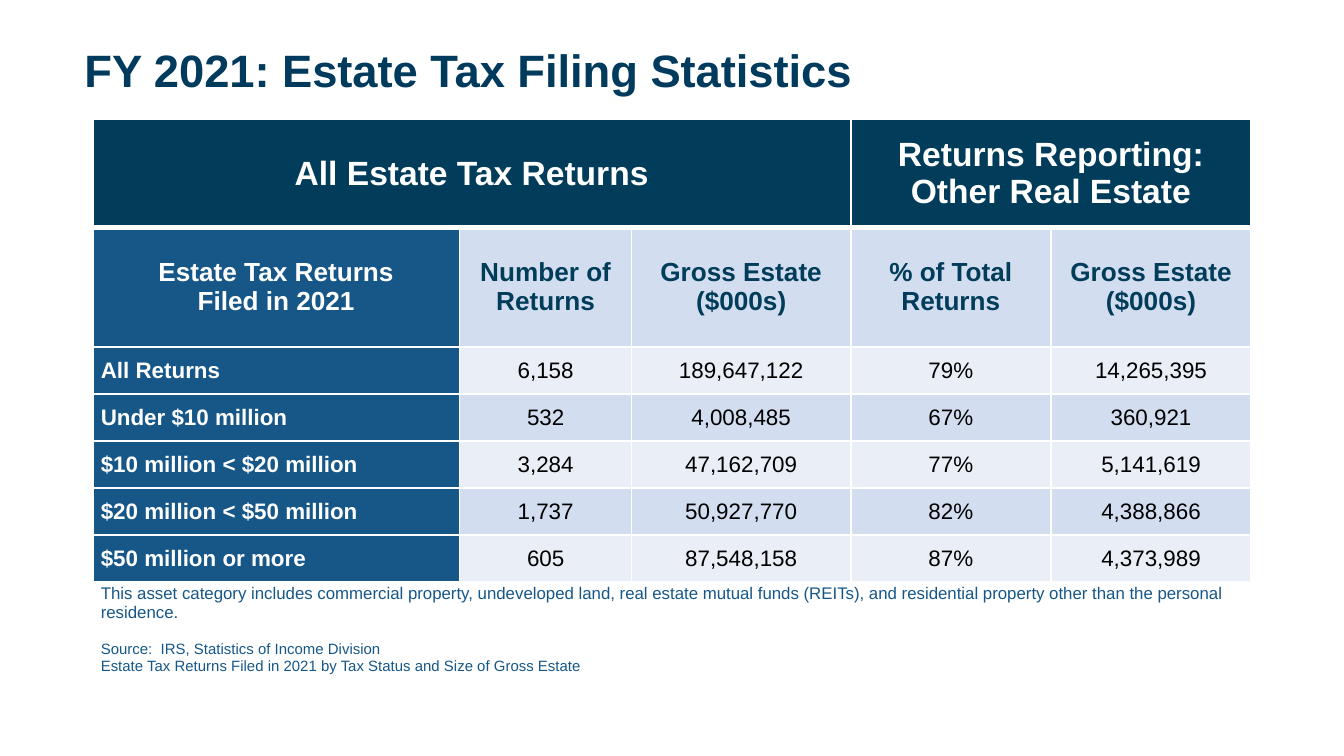
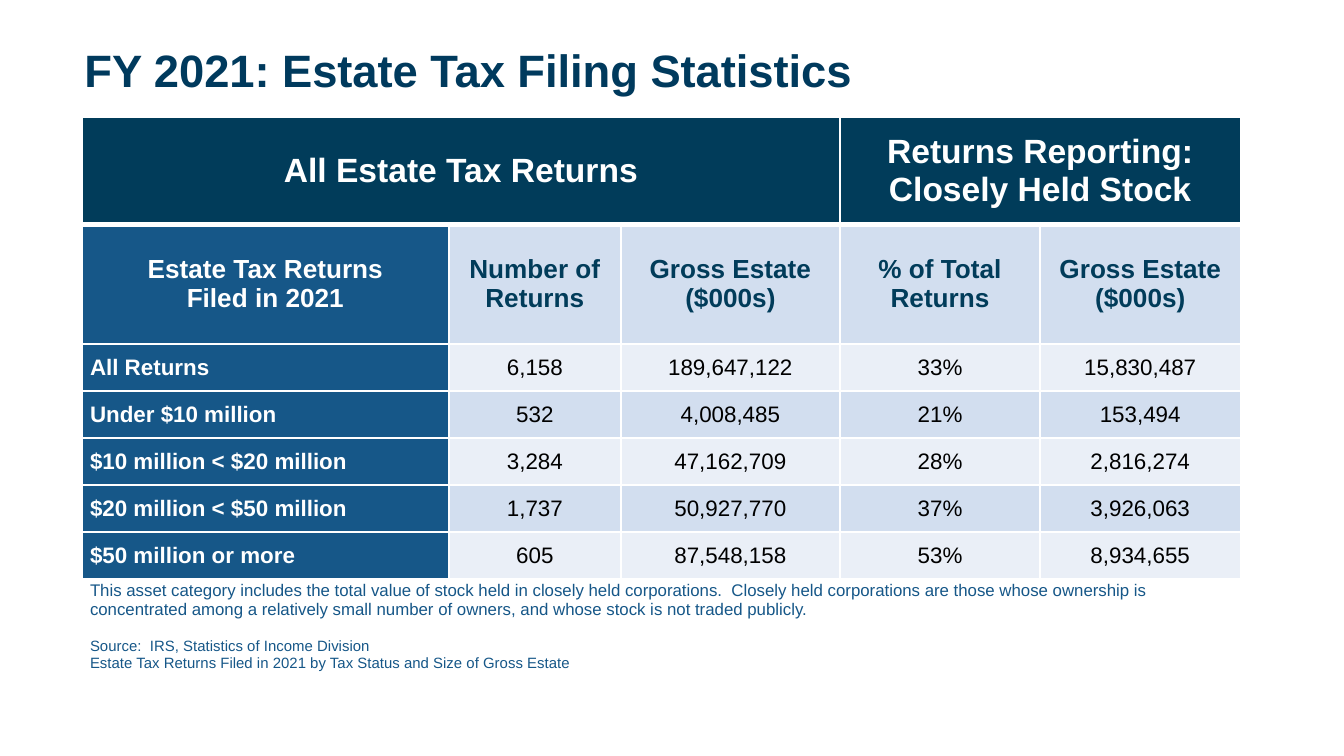
from copy import deepcopy
from dataclasses import dataclass

from lxml.etree import SubElement
from pptx import Presentation
from pptx.dml.color import RGBColor
from pptx.enum.text import MSO_ANCHOR, PP_ALIGN
from pptx.oxml.ns import qn
from pptx.util import Inches, Pt


@dataclass(frozen=True)
class Theme:
    """Colours, font and type sizes shared by all slides."""

    font: str = "Arial"
    title: str = "003A5D"
    navy: str = "013C5A"
    blue: str = "165788"
    light: str = "D2DEEF"
    pale: str = "EAEFF7"
    white: str = "FFFFFF"
    black: str = "000000"
    title_size: float = 24.3
    group_size: float = 18
    heading_size: float = 14
    body_size: float = 12
    note_size: float = 9
    source_size: float = 8


THEME = Theme()
SLIDE_WIDTH = Inches(10)
GRID_COLUMNS = 100
COLUMN_SPANS = (27.3, 12.8, 16.3, 14.9, 14.9)
ROW_SPANS = (8, 8.9) + (3.5,) * 6
BODY_INSETS = (0.6, 1, 1, 0, 0)
TITLE = "FY 2021: Estate Tax Filing Statistics"
HEADINGS = (
    "Estate Tax Returns\nFiled in 2021",
    "Number of\nReturns",
    "Gross Estate\n($000s)",
    "% of Total Returns",
    "Gross Estate ($000s)",
)
ALL_RETURNS = (
    ("All Returns", "6,158", "189,647,122"),
    ("Under $10 million", "532", "4,008,485"),
    ("$10 million < $20 million", "3,284", "47,162,709"),
    ("$20 million < $50 million", "1,737", "50,927,770"),
    ("$50 million or more", "605", "87,548,158"),
)
SOURCE = (
    "Source:  IRS, Statistics of Income Division\n"
    "Estate Tax Returns Filed in 2021 by Tax Status and Size of Gross Estate"
)


@dataclass(frozen=True)
class AssetCategory:
    """One asset category: table position, figures and explanation."""

    name: str
    left: float
    top: float
    figures: tuple
    note: str


CATEGORIES = (
    AssetCategory(
        "Other Real Estate", 6.9, 8.9,
        (("79%", "14,265,395"), ("67%", "360,921"), ("77%", "5,141,619"),
         ("82%", "4,388,866"), ("87%", "4,373,989")),
        "This asset category includes commercial property, undeveloped land, "
        "real estate mutual funds (REITs), and residential property other than "
        "the personal residence.",
    ),
    AssetCategory(
        "Closely Held Stock", 6.1, 8.7,
        (("33%", "15,830,487"), ("21%", "153,494"), ("28%", "2,816,274"),
         ("37%", "3,926,063"), ("53%", "8,934,655")),
        "This asset category includes the total value of stock held in closely "
        "held corporations.  Closely held corporations are those whose ownership "
        "is concentrated among a relatively small number of owners, and whose "
        "stock is not traded publicly.",
    ),
)


def grid(units):
    """Convert square grid units to a slide length."""
    return int(SLIDE_WIDTH * units / GRID_COLUMNS)


def write(para, text, *, size, color, bold=False, align=PP_ALIGN.LEFT,
          before=0, line_spacing=None):
    """Fill a paragraph with formatted text, newlines being line breaks."""
    para.text = text
    para.alignment = align
    para.space_before = Pt(before)
    para.space_after = Pt(0)
    if line_spacing:
        para.line_spacing = line_spacing
    for span in para.runs:
        span.font.name = THEME.font
        span.font.size = Pt(size)
        span.font.bold = bold
        span.font.color.rgb = RGBColor.from_string(color)
    for line_break in para._p.findall(qn("a:br")):
        line_break.insert(0, deepcopy(para.runs[0].font._element))


def set_borders(cell, top=1, bottom=1):
    """Give a cell white borders of the given widths in points."""
    properties = cell._tc.get_or_add_tcPr()
    sides = (("L", 1), ("R", 1), ("T", top), ("B", bottom))
    for index, (side, width) in enumerate(sides):
        line = SubElement(properties, qn(f"a:ln{side}"), w=str(Pt(width)))
        solid = SubElement(line, qn("a:solidFill"))
        SubElement(solid, qn("a:srgbClr"), val=THEME.white)
        properties.insert(index, line)


def fill_cell(cell, text, *, fill=None, inset=0.6, **text_format):
    """Set a cell's text, fill and margins."""
    cell.margin_left = cell.margin_right = grid(inset)
    cell.margin_top = cell.margin_bottom = 0
    cell.vertical_anchor = MSO_ANCHOR.MIDDLE
    if fill:
        cell.fill.solid()
        cell.fill.fore_color.rgb = RGBColor.from_string(fill)
    else:
        cell.fill.background()
    write(cell.text_frame.paragraphs[0], text, **text_format)


def add_title(page, text):
    """Add the slide title."""
    box = page.shapes.add_textbox(grid(5.3), grid(3), grid(87.8), grid(4.9))
    box.text_frame.word_wrap = True
    box.text_frame.vertical_anchor = MSO_ANCHOR.MIDDLE
    write(box.text_frame.paragraphs[0], text, size=THEME.title_size,
          color=THEME.title, bold=True, line_spacing=0.9)


def add_grid_table(page, left, top):
    """Add an unbanded table with the shared rows, columns and borders."""
    frame = page.shapes.add_table(
        len(ROW_SPANS), len(COLUMN_SPANS), grid(left), grid(top),
        grid(sum(COLUMN_SPANS)), grid(sum(ROW_SPANS)))
    table = frame.table
    table.first_row = table.horz_banding = False
    for column, span in zip(table.columns, COLUMN_SPANS):
        column.width = grid(span)
    for index, (row, span) in enumerate(zip(table.rows, ROW_SPANS)):
        row.height = grid(span)
        for cell in row.cells:
            set_borders(cell, top=3 if index == 1 else 1,
                        bottom=3 if index == 0 else 1)
    return table


def fill_headings(table, category_name):
    """Fill the group headings and the column headings."""
    groups = ((0, 2, "All Estate Tax Returns"),
              (3, 4, f"Returns Reporting:\n{category_name}"))
    for first, last, text in groups:
        table.cell(0, first).merge(table.cell(0, last))
        fill_cell(table.cell(0, first), text, fill=THEME.navy,
                  size=THEME.group_size, color=THEME.white, bold=True,
                  align=PP_ALIGN.CENTER)
    for column, text in enumerate(HEADINGS):
        fill_cell(table.cell(1, column), text,
                  fill=THEME.light if column else THEME.blue,
                  size=THEME.heading_size,
                  color=THEME.navy if column else THEME.white,
                  bold=True, align=PP_ALIGN.CENTER)


def fill_body(table, figures):
    """Fill the banded rows of estate sizes and figures."""
    for index, (totals, shares) in enumerate(zip(ALL_RETURNS, figures)):
        band = THEME.light if index % 2 else THEME.pale
        for column, text in enumerate(totals + shares):
            fill_cell(table.cell(index + 2, column), text,
                      fill=band if column else THEME.blue,
                      inset=BODY_INSETS[column], size=THEME.body_size,
                      color=THEME.black if column else THEME.white,
                      bold=column == 0,
                      align=PP_ALIGN.CENTER if column else PP_ALIGN.LEFT)


def fill_note(table, note):
    """Fill the last row with the explanation and the source."""
    row = len(ROW_SPANS) - 1
    cell = table.cell(row, 0)
    cell.merge(table.cell(row, len(COLUMN_SPANS) - 1))
    fill_cell(cell, note, size=THEME.note_size, color=THEME.blue)
    write(cell.text_frame.add_paragraph(), SOURCE, size=THEME.source_size,
          color=THEME.blue, before=10)


def add_category_page(deck, category):
    """Add the statistics slide for one asset category."""
    page = deck.slides.add_slide(deck.slide_layouts[6])
    add_title(page, TITLE)
    table = add_grid_table(page, category.left, category.top)
    fill_headings(table, category.name)
    fill_body(table, category.figures)
    fill_note(table, category.note)


def main():
    """Build and save the deck."""
    deck = Presentation()
    deck.slide_width = SLIDE_WIDTH
    deck.slide_height = SLIDE_WIDTH * 9 // 16
    for category in CATEGORIES:
        add_category_page(deck, category)
    deck.save("out.pptx")


if __name__ == "__main__":
    main()
